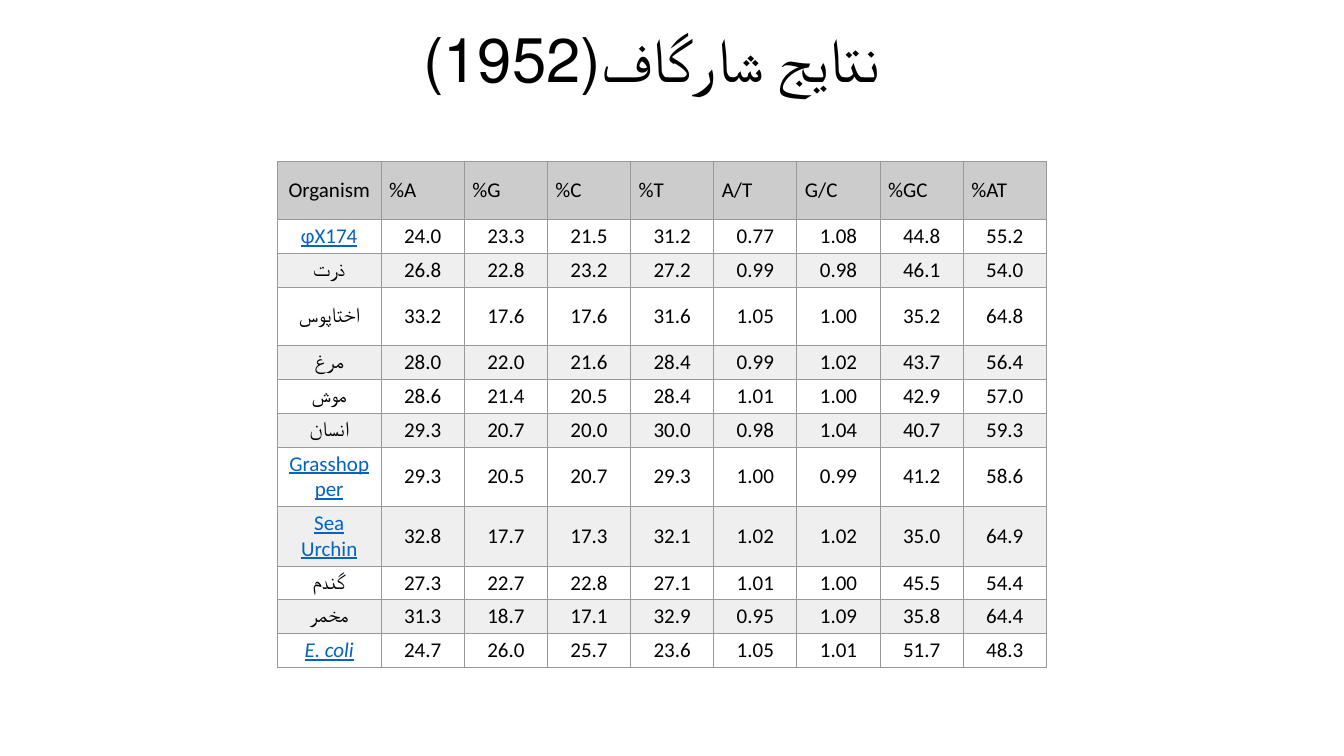
from lxml.etree import SubElement
from pptx import Presentation
from pptx.dml.color import RGBColor
from pptx.enum.text import MSO_ANCHOR as Anchor, PP_ALIGN as Align
from pptx.oxml.ns import qn
from pptx.util import Inches, Pt

FONT = "Calibri"
BLACK, LINK, BORDER = "000000", "0563C1", "999999"
HEADER_FILL, BAND_FILLS = "CCCCCC", ("EFEFEF", "FFFFFF")
LINKED = {"φX174", "Grasshopper", "Sea Urchin", "E. coli"}
ITALIC = {"E. coli"}
TALL_ROWS = {"Organism", "اختاپوس", "Grasshopper", "Sea Urchin"}
ROWS = [
    ("Organism", "%A", "%G", "%C", "%T", "A/T", "G/C", "%GC", "%AT"),
    ("φX174", "24.0", "23.3", "21.5", "31.2", "0.77", "1.08", "44.8", "55.2"),
    ("ذرت", "26.8", "22.8", "23.2", "27.2", "0.99", "0.98", "46.1", "54.0"),
    ("اختاپوس", "33.2", "17.6", "17.6", "31.6", "1.05", "1.00", "35.2", "64.8"),
    ("مرغ", "28.0", "22.0", "21.6", "28.4", "0.99", "1.02", "43.7", "56.4"),
    ("موش", "28.6", "21.4", "20.5", "28.4", "1.01", "1.00", "42.9", "57.0"),
    ("انسان", "29.3", "20.7", "20.0", "30.0", "0.98", "1.04", "40.7", "59.3"),
    ("Grasshopper", "29.3", "20.5", "20.7", "29.3", "1.00", "0.99", "41.2", "58.6"),
    ("Sea Urchin", "32.8", "17.7", "17.3", "32.1", "1.02", "1.02", "35.0", "64.9"),
    ("گندم", "27.3", "22.7", "22.8", "27.1", "1.01", "1.00", "45.5", "54.4"),
    ("مخمر", "31.3", "18.7", "17.1", "32.9", "0.95", "1.09", "35.8", "64.4"),
    ("E. coli", "24.7", "26.0", "25.7", "23.6", "1.05", "1.01", "51.7", "48.3"),
]


def color(value):
    """Return the colour for a hex string."""
    return RGBColor.from_string(value)


def style_paragraph(paragraph, size, align, font_color=BLACK):
    """Set the alignment and font of a paragraph."""
    paragraph.alignment = align
    paragraph.font.name = FONT
    paragraph.font.size = Pt(size)
    paragraph.font.color.rgb = color(font_color)


def add_title(slide, text):
    """Place the right-to-left title in its placeholder."""
    title = slide.shapes.title
    title.left, title.top = Inches(1.75), Inches(0)
    title.width, title.height = Inches(9.42), Inches(1.25)
    title.text_frame.text = text
    title.text_frame.vertical_anchor = Anchor.MIDDLE
    paragraph = title.text_frame.paragraphs[0]
    paragraph.line_spacing = 0.9
    style_paragraph(paragraph, 44, Align.CENTER)
    paragraph._p.get_or_add_pPr().set("rtl", "1")


def add_borders(cell):
    """Draw a thin line on all four sides of a cell."""
    properties = cell._tc.get_or_add_tcPr()
    for side in ("a:lnL", "a:lnR", "a:lnT", "a:lnB"):
        line = SubElement(properties, qn(side), w=str(Pt(0.75)))
        fill = SubElement(line, qn("a:solidFill"))
        SubElement(fill, qn("a:srgbClr"), val=BORDER)


def fill_cell(cell, text, fill, align):
    """Write and format one table cell."""
    cell.text = text
    cell.vertical_anchor = Anchor.MIDDLE
    cell.margin_left = cell.margin_right = Inches(0.08)
    cell.margin_top = cell.margin_bottom = Inches(0.04)
    add_borders(cell)
    cell.fill.solid()
    cell.fill.fore_color.rgb = color(fill)
    paragraph = cell.text_frame.paragraphs[0]
    style_paragraph(paragraph, 15, align, LINK if text in LINKED else BLACK)
    if text in LINKED:
        paragraph.font.underline = True
    if text in ITALIC:
        paragraph.font.italic = True


def add_base_table(slide):
    """Add the table of base composition by organism."""
    width, name_width, count = 7.63, 1.03, len(ROWS[0])
    table = slide.shapes.add_table(
        len(ROWS), count, Inches(2.75), Inches(1.6), Inches(width), Inches(4.99)
    ).table
    table.horz_banding = False
    for index, column in enumerate(table.columns):
        value_width = (width - name_width) / (count - 1)
        column.width = Inches(value_width if index else name_width)
    for row_index, values in enumerate(ROWS):
        tall = values[0] in TALL_ROWS
        table.rows[row_index].height = Inches(0.58 if tall else 0.33)
        fill = BAND_FILLS[row_index % 2] if row_index else HEADER_FILL
        for column_index, text in enumerate(values):
            is_measure = row_index == 0 and column_index > 0
            align = Align.LEFT if is_measure else Align.CENTER
            fill_cell(table.cell(row_index, column_index), text, fill, align)
    table.first_row = False


def main():
    """Build and save the slide."""
    presentation = Presentation()
    presentation.slide_width = Inches(13.33)
    presentation.slide_height = Inches(7.5)
    slide = presentation.slides.add_slide(presentation.slide_layouts[5])
    add_title(slide, "نتایج شارگاف(1952)")
    add_base_table(slide)
    presentation.save("out.pptx")


if __name__ == "__main__":
    main()
